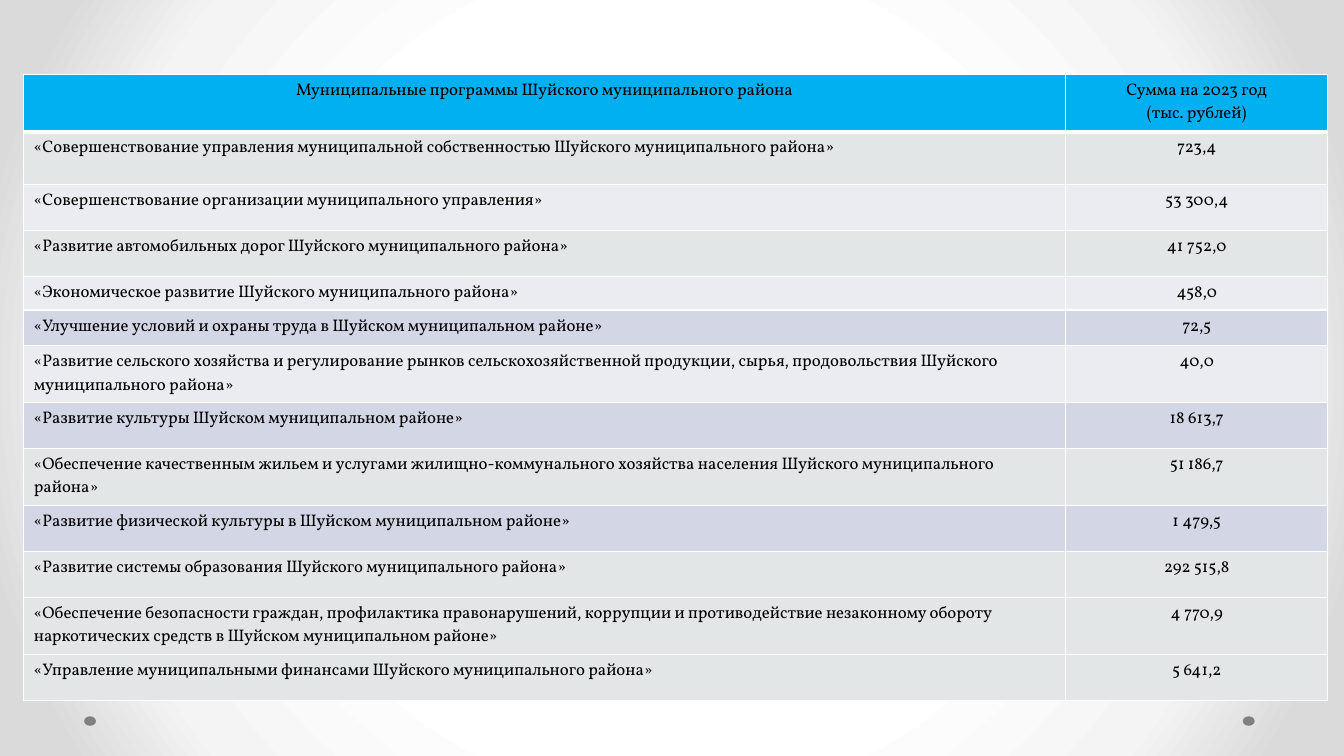
"""Slide with a table of the municipal programmes and their 2023 sums."""
from lxml import etree
from pptx import Presentation
from pptx import util as u
from pptx.dml.color import RGBColor
from pptx.enum import shapes, text
from pptx.oxml import ns

HUES = {"head": "00B0F0", "grey": "E3E6E7", "pale": "EAECF2", "blue": "D2D6E5",
        "ink": "000000", "rule": "FFFFFF", "dot": "808080"}
GLOW = ((50, "FFFFFF"), (76, "F4F4F4"), (92, "DADADA"))
HEAD = ("Муниципальные программы Шуйского муниципального района",
        "Сумма на 2023 год\n(тыс. рублей)", "head", 1.44)
ROWS = (
    HEAD,
    ("«Совершенствование управления муниципальной собственностью Шуйского муниципального района»",
     "723,4", "grey", 1.33),
    ("«Совершенствование организации муниципального управления»", "53 300,4", "pale", 1.16),
    ("«Развитие автомобильных дорог Шуйского муниципального района»", "41 752,0", "grey", 1.16),
    ("«Экономическое развитие Шуйского муниципального района»", "458,0", "pale", 0.83),
    ("«Улучшение условий и охраны труда в Шуйском муниципальном районе»", "72,5", "blue", 0.9),
    ("«Развитие сельского хозяйства и регулирование рынков сельскохозяйственной продукции, "
     "сырья, продовольствия Шуйского муниципального района»", "40,0", "pale", 1.43),
    ("«Развитие культуры Шуйском муниципальном районе»", "18 613,7", "blue", 1.16),
    ("«Обеспечение качественным жильем и услугами жилищно-коммунального хозяйства населения "
     "Шуйского муниципального района»", "51 186,7", "grey", 1.43),
    ("«Развитие физической культуры в Шуйском муниципальном районе»", "1 479,5", "blue", 1.16),
    ("«Развитие системы образования Шуйского муниципального района»", "292 515,8", "grey", 1.16),
    ("«Обеспечение безопасности граждан, профилактика правонарушений, коррупции и "
     "противодействие незаконному обороту наркотических средств в Шуйском муниципальном районе»",
     "4 770,9", "grey", 1.43),
    ("«Управление муниципальными финансами Шуйского муниципального района»",
     "5 641,2", "grey", 1.16),
)


def line(tag, hue, width):
    ln = etree.Element(ns.qn("a:" + tag), w=str(u.Pt(width)))
    fill = etree.SubElement(ln, ns.qn("a:solidFill"))
    etree.SubElement(fill, ns.qn("a:srgbClr"), val=HUES[hue])
    return ln


class Deck:
    def __init__(self):
        self.font, self.size = "Vollkorn", u.Pt(12)
        self.prs = Presentation()
        self.prs.slide_width, self.prs.slide_height = u.Cm(33.87), u.Cm(19.05)
        self.slide = self.prs.slides.add_slide(self.prs.slide_layouts[6])

    def glow(self, stops):
        back = self.slide.background.fill
        back.gradient()
        grad = self.slide.element.find(".//" + ns.qn("a:gradFill"))
        for part in list(grad):
            grad.remove(part)
        items = etree.SubElement(grad, ns.qn("a:gsLst"))
        for pos, hue in stops:
            stop = etree.SubElement(items, ns.qn("a:gs"), pos=str(pos * 1000))
            etree.SubElement(stop, ns.qn("a:srgbClr"), val=hue)
        way = etree.SubElement(grad, ns.qn("a:path"))
        way.set("path", "circle")
        etree.SubElement(way, ns.qn("a:fillToRect"), l="50000", t="50000", r="50000", b="50000")

    def dot(self, left, top, width, height):
        dot = self.slide.shapes.add_shape(shapes.MSO_SHAPE.OVAL, *map(u.Cm, (left, top, width, height)))
        dot.shadow.inherit = False
        dot.fill.solid()
        dot.fill.fore_color.rgb = RGBColor.from_string(HUES["dot"])
        dot.line.fill.background()

    def label(self, frame, words, align):
        for i, part in enumerate(words.split("\n")):
            para = frame.add_paragraph() if i else frame.paragraphs[0]
            para.alignment = align
            run = para.add_run()
            run.text = part
            run.font.name, run.font.size = self.font, self.size
            run.font.color.rgb = RGBColor.from_string(HUES["ink"])
            run.font._element.insert(0, line("ln", "ink", 0.75))

    def cell(self, cell, words, hue, align, top, base):
        cell.fill.solid()
        cell.fill.fore_color.rgb = RGBColor.from_string(HUES[hue])
        props = cell._tc.get_or_add_tcPr()
        for i, (side, width) in enumerate(zip("LRTB", (1, 1, top, base))):
            props.insert(i, line("ln" + side, "rule", width))
        self.label(cell.text_frame, words, align)

    def table(self, left, top, cols, rows):
        size = sum(cols), sum(row[-1] for row in rows)
        grid = self.slide.shapes.add_table(len(rows), len(cols), *map(u.Cm, (left, top, *size))).table
        grid.first_row = grid.horz_banding = False
        for col, width in zip(grid.columns, cols):
            col.width = u.Cm(width)
        for i, (name, total, hue, height) in enumerate(rows):
            grid.rows[i].height = u.Cm(height)
            rules = 3 if i == 1 else 1, 3 if i == 0 else 1
            side = text.PP_ALIGN.LEFT if i else text.PP_ALIGN.CENTER
            self.cell(grid.cell(i, 0), name, hue, side, *rules)
            self.cell(grid.cell(i, 1), total, hue, text.PP_ALIGN.CENTER, *rules)


def main():
    deck = Deck()
    deck.glow(GLOW)
    for left in (31.32, 2.12):
        deck.dot(left, 18.05, 0.3, 0.24)
    deck.table(0.6, 1.88, (26.26, 6.6), ROWS)
    deck.prs.save("out.pptx")


if __name__ == "__main__":
    main()
